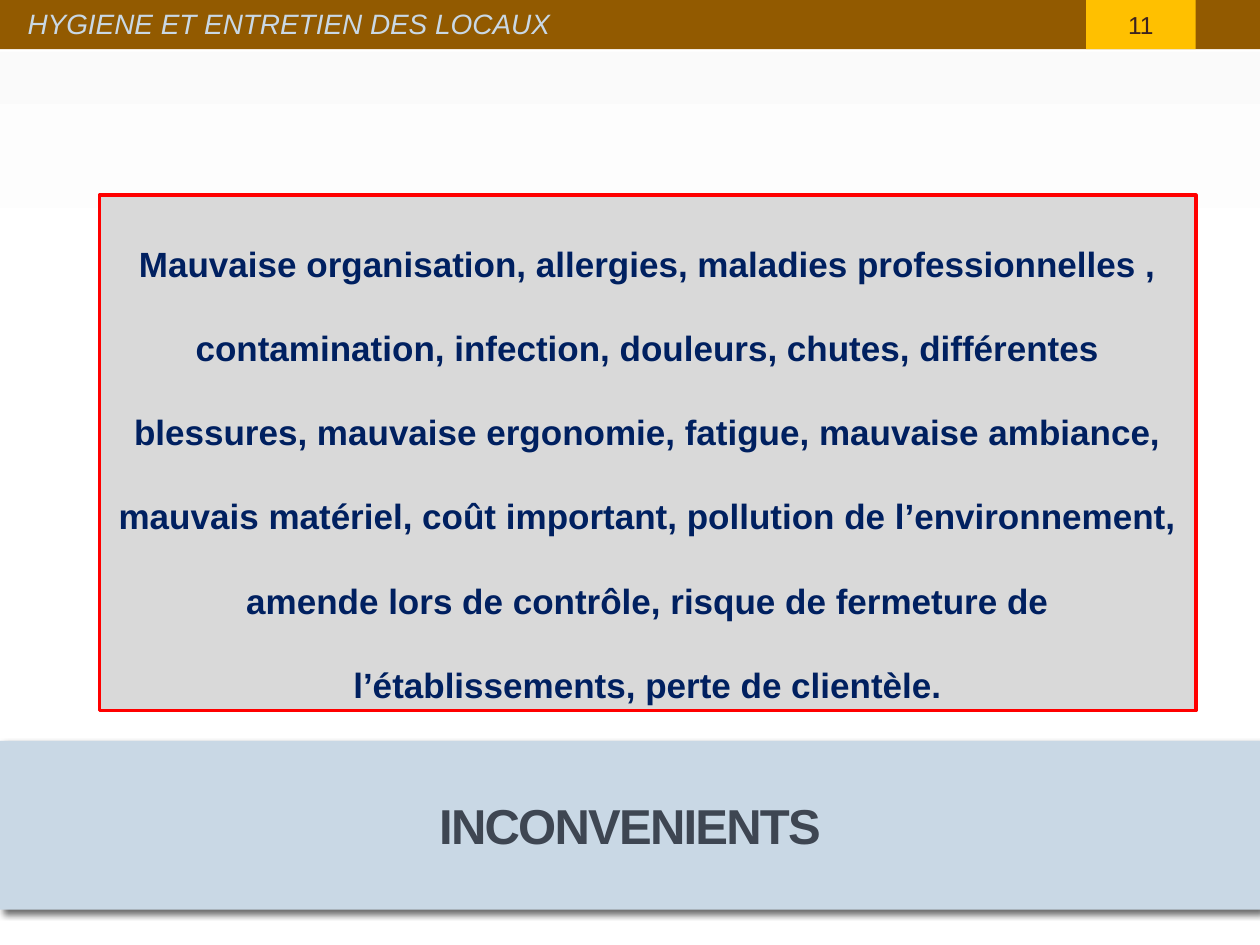
from lxml.etree import SubElement
from pptx import Presentation
from pptx.dml.color import RGBColor
from pptx.enum.shapes import MSO_SHAPE as Shape
from pptx.enum.text import MSO_ANCHOR as Anchor, MSO_AUTO_SIZE as AutoSize, PP_ALIGN as Align
from pptx.oxml.ns import qn
from pptx.util import Inches, Pt

# Content
HEADER = "HYGIENE ET ENTRETIEN DES LOCAUX"
PAGE_NUMBER = "11"
TITLE = "INCONVENIENTS"
DRAWBACKS = (
    "Mauvaise organisation, allergies, maladies professionnelles , "
    "contamination, infection, douleurs, chutes, différentes blessures, "
    "mauvaise ergonomie, fatigue, mauvaise ambiance, mauvais matériel, "
    "coût important, pollution de l’environnement, amende lors de contrôle, "
    "risque de fermeture de l’établissements, perte de clientèle."
)

# Look
FONT = "Arial"
WHITE = RGBColor(0xFF, 0xFF, 0xFF)
OFF_WHITE = RGBColor(0xFA, 0xFA, 0xFA)
BROWN = RGBColor(0x92, 0x5A, 0x00)
GOLD = RGBColor(0xFF, 0xC0, 0x00)
DARK_BROWN = RGBColor(0x3C, 0x23, 0x1F)
PALE_BLUE = RGBColor(0xC9, 0xD8, 0xE5)
SLATE = RGBColor(0x3E, 0x46, 0x52)
GREY = RGBColor(0xD9, 0xD9, 0xD9)
RED = RGBColor(0xFF, 0x00, 0x00)
NAVY = RGBColor(0x00, 0x20, 0x60)
WIDTH, HEIGHT, BAR_HEIGHT = 10, 7.5, 0.39


def place(shape, left, top, width, height):
    shape.left, shape.top = Inches(left), Inches(top)
    shape.width, shape.height = Inches(width), Inches(height)


def add_band(page, left, top, width, height, color):
    band = page.shapes.add_shape(Shape.RECTANGLE, Inches(left), Inches(top),
                                 Inches(width), Inches(height))
    band.fill.solid()
    band.fill.fore_color.rgb = color
    band.line.fill.background()
    band.shadow.inherit = False
    return band


def write(shape, text, size, color, bold=False, italic=False,
          align=Align.CENTER, line_spacing=1.0):
    frame = shape.text_frame
    frame.word_wrap = True
    frame.auto_size = AutoSize.NONE
    frame.vertical_anchor = Anchor.MIDDLE
    para = frame.paragraphs[0]
    para.alignment = align
    para.line_spacing = line_spacing
    para.space_before = Pt(0)
    span = para.add_run()
    span.text = text
    font = span.font
    font.name, font.size, font.color.rgb = FONT, Pt(size), color
    font.bold, font.italic = bold, italic
    return para


def add_shadow(shape):
    effects = SubElement(shape.element.spPr, qn("a:effectLst"))
    shadow = SubElement(effects, qn("a:outerShdw"), blurRad=str(Pt(4)),
                        dist=str(Pt(3)), dir="2700000", algn="tl", rotWithShape="0")
    color = SubElement(shadow, qn("a:srgbClr"), val="000000")
    SubElement(color, qn("a:alpha"), val="59000")


def main():
    deck = Presentation()
    deck.slide_width, deck.slide_height = Inches(WIDTH), Inches(HEIGHT)
    page = deck.slides.add_slide(deck.slide_layouts[1])

    # Background
    backdrop = page.background.fill
    backdrop.gradient()
    backdrop.gradient_angle = 270
    for stop, color, position in zip(backdrop.gradient_stops,
                                     (OFF_WHITE, WHITE), (0, 0.33)):
        stop.color.rgb, stop.position = color, position

    # Header bar with page number
    add_band(page, 0, 0.16, WIDTH, 0.25, WHITE)
    add_band(page, 0, 0, WIDTH, BAR_HEIGHT, BROWN)
    number = add_band(page, 8.62, 0, 0.87, BAR_HEIGHT, GOLD)
    write(number, PAGE_NUMBER, 14, DARK_BROWN)
    header = page.shapes.add_textbox(0, 0, 0, 0)
    place(header, 0.12, 0.01, 8.19, 0.35)
    write(header, HEADER, 16, PALE_BLUE, italic=True, align=Align.LEFT)

    # Title band
    title = page.shapes.title
    place(title, 0, 5.88, WIDTH, 1.34)
    title.fill.solid()
    title.fill.fore_color.rgb = PALE_BLUE
    add_shadow(title)
    heading = write(title, TITLE, 28, SLATE, bold=True)
    heading.runs[0].font._element.set("spc", "-100")

    # Framed list of drawbacks
    body = page.placeholders[1]
    place(body, 0.79, 1.55, 8.7, 4.09)
    body.fill.solid()
    body.fill.fore_color.rgb = GREY
    body.line.color.rgb = RED
    body.line.width = Pt(2.08)
    para = write(body, DRAWBACKS, 20, NAVY, bold=True, line_spacing=2.0)
    properties = para._p.get_or_add_pPr()
    properties.set("marL", "0")
    properties.set("indent", "0")
    SubElement(properties, qn("a:buNone"))

    deck.save("out.pptx")


if __name__ == "__main__":
    main()
